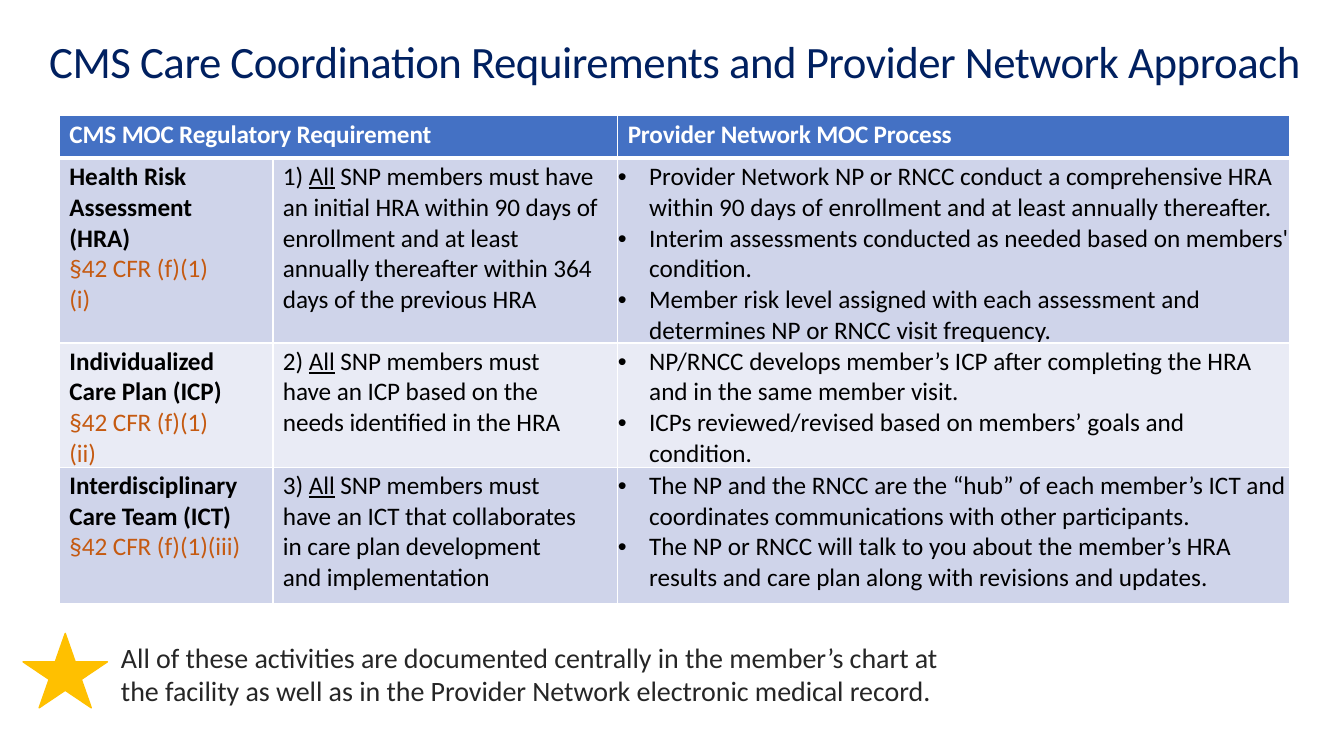
from lxml.etree import SubElement
from pptx import Presentation
from pptx.dml.color import RGBColor
from pptx.enum.shapes import MSO_SHAPE as Shape
from pptx.oxml.ns import qn
from pptx.util import Cm, Pt

NAVY, BLUE, RUST, GOLD = "002060", "4471C4", "C55A11", "FFC000"
WHITE, BLACK, GREY = "FFFFFF", "000000", "262626"
BANDS = ["CFD4EA", "E9EBF5", "CFD4EA"]

COLS = [5.38, 8.69, 16.94]
ROWS = [1.07, 4.55, 3.07, 3.43]
HEADS = [(0, "CMS MOC Regulatory Requirement"), (2, "Provider Network MOC Process")]

# Each row: topic lines, rule, demand after "All", process bullets, right margins
TOPICS = [
    (["Health Risk Assessment (HRA)"], "§42 CFR (f)(1)(i)",
     " SNP members must have an initial HRA within 90 days of enrollment and at least "
     "annually thereafter within 364 days of the previous HRA",
     ["Provider Network NP or RNCC conduct a comprehensive HRA within 90 days of "
      "enrollment and at least annually thereafter.",
      "Interim assessments conducted as needed based on members' condition.",
      "Member risk level assigned with each assessment and determines NP or RNCC "
      "visit frequency."],
     (1.22, 0.38)),
    (["Individualized Care Plan (ICP)"], "§42 CFR (f)(1)(ii)",
     " SNP members must have an ICP based on the needs identified in the HRA",
     ["NP/RNCC develops member’s ICP after completing the HRA and in the same "
      "member visit.",
      "ICPs reviewed/revised based on members’ goals and condition."],
     (1.22, 1.04)),
    (["Interdisciplinary", "Care Team (ICT)"], "§42 CFR (f)(1)(iii)",
     " SNP members must have an ICT that collaborates in care plan development and "
     "implementation",
     ["The NP and the RNCC are the “hub” of each member’s ICT and coordinates "
      "communications with other participants.",
      "The NP or RNCC will talk to you about the member’s HRA results and care plan "
      "along with revisions and updates."],
     (0.25, 1.04)),
]


def rgb(color):
    return RGBColor.from_string(color)


class Deck:
    font = "Calibri"

    def __init__(self):
        self.prs = Presentation()
        self.prs.slide_width, self.prs.slide_height = Cm(33.87), Cm(19.05)
        self.slide = self.prs.slides.add_slide(self.prs.slide_layouts[6])

    def prose(self, frame, paras, size, color, gap=0, bullet=False):
        """Fill a frame; a paragraph is a list of (text, font values), gap is tracking."""
        for i, runs in enumerate(paras):
            para = frame.paragraphs[0] if i == 0 else frame.add_paragraph()
            if bullet:
                props = para._p.get_or_add_pPr()
                props.set("marL", str(Cm(0.79)))
                props.set("indent", str(-Cm(0.79)))
                SubElement(props, qn("a:buFont"), typeface="Arial")
                SubElement(props, qn("a:buChar"), char="•")
            for text, style in runs:
                run = para.add_run()
                run.text = text
                look = {"name": self.font, "size": Pt(size), "color": color, **style}
                run.font.color.rgb = rgb(look.pop("color"))
                for key, value in look.items():
                    setattr(run.font, key, value)
                run._r.get_or_add_rPr().set("spc", str(round(gap * 100)))

    def label(self, box, text, size, color, gap):
        frame = self.slide.shapes.add_textbox(*map(Cm, box)).text_frame
        frame.word_wrap = True
        frame.margin_left = frame.margin_top = Cm(0.05)
        frame.margin_right = frame.margin_bottom = 0
        self.prose(frame, [[(text, {})]], size, color, gap)

    def star(self, box, color):
        star = self.slide.shapes.add_shape(Shape.STAR_5_POINT, *map(Cm, box))
        star.shadow.inherit = False
        star.fill.solid()
        star.fill.fore_color.rgb = star.line.color.rgb = rgb(color)
        star.line.width = Pt(0.96)

    def grid(self, left, top, cols, rows):
        table = self.slide.shapes.add_table(
            len(rows), len(cols), Cm(left), Cm(top), Cm(sum(cols)), Cm(sum(rows))).table
        for col, width in zip(table.columns, cols):
            col.width = Cm(width)
        for row, height in zip(table.rows, rows):
            row.height = Cm(height)
        return table

    def cell(self, cell, fill, paras, color=BLACK, left=0.25, right=0, edges=(1, 1), **style):
        """Fill one cell; edges are the widths of its top and bottom borders."""
        margins = {"left": left, "right": right, "top": 0.08, "bottom": 0}
        for side, size in margins.items():
            setattr(cell, "margin_" + side, Cm(size))
        props = cell._tc.get_or_add_tcPr()
        for side, width in zip("LRTB", (1, 1, *edges)):
            line = SubElement(props, qn("a:ln" + side), w=str(Pt(width)))
            SubElement(SubElement(line, qn("a:solidFill")), qn("a:srgbClr"), val=WHITE)
        cell.fill.solid()
        cell.fill.fore_color.rgb = rgb(fill)
        self.prose(cell.text_frame, paras, 18, color, **style)


def main():
    deck = Deck()
    deck.label((1.19, 0.81, 31.6, 1.4),
               "CMS Care Coordination Requirements and Provider Network Approach",
               32, NAVY, -0.36)

    table = deck.grid(1.5, 2.92, COLS, ROWS)
    table.cell(0, 0).merge(table.cell(0, 1))
    bold, plain = {"bold": True}, {"bold": False}
    for col, head in HEADS:
        deck.cell(table.cell(0, col), BLUE, [[(head, bold)]], WHITE,
                  edges=(1, 3), gap=-0.1)

    for row, (names, rule, demand, steps, rights) in enumerate(TOPICS, 1):
        fill = BANDS[row - 1]
        edges = (3 if row == 1 else 1, 1)
        topic = [[(name, bold)] for name in names]
        topic.append([(rule, {"color": RUST, **plain})])
        need = [[(f"{row}) ", plain), ("All", {"underline": True, **plain}),
                 (demand, plain)]]
        for col, paras in enumerate((topic, need)):
            deck.cell(table.cell(row, col), fill, paras, right=rights[col],
                      edges=edges, gap=-0.07)
        deck.cell(table.cell(row, 2), fill, [[(step, plain)] for step in steps],
                  left=0, edges=edges, bullet=True)

    deck.star((0.58, 15.96, 2.13, 1.88), GOLD)
    deck.label((3, 16.08, 21.56, 1.75),
               "All of these activities are documented centrally in the member’s chart at "
               "the facility as well as in the Provider Network electronic medical record.",
               20, GREY, -0.06)
    deck.prs.save("out.pptx")


if __name__ == "__main__":
    main()
